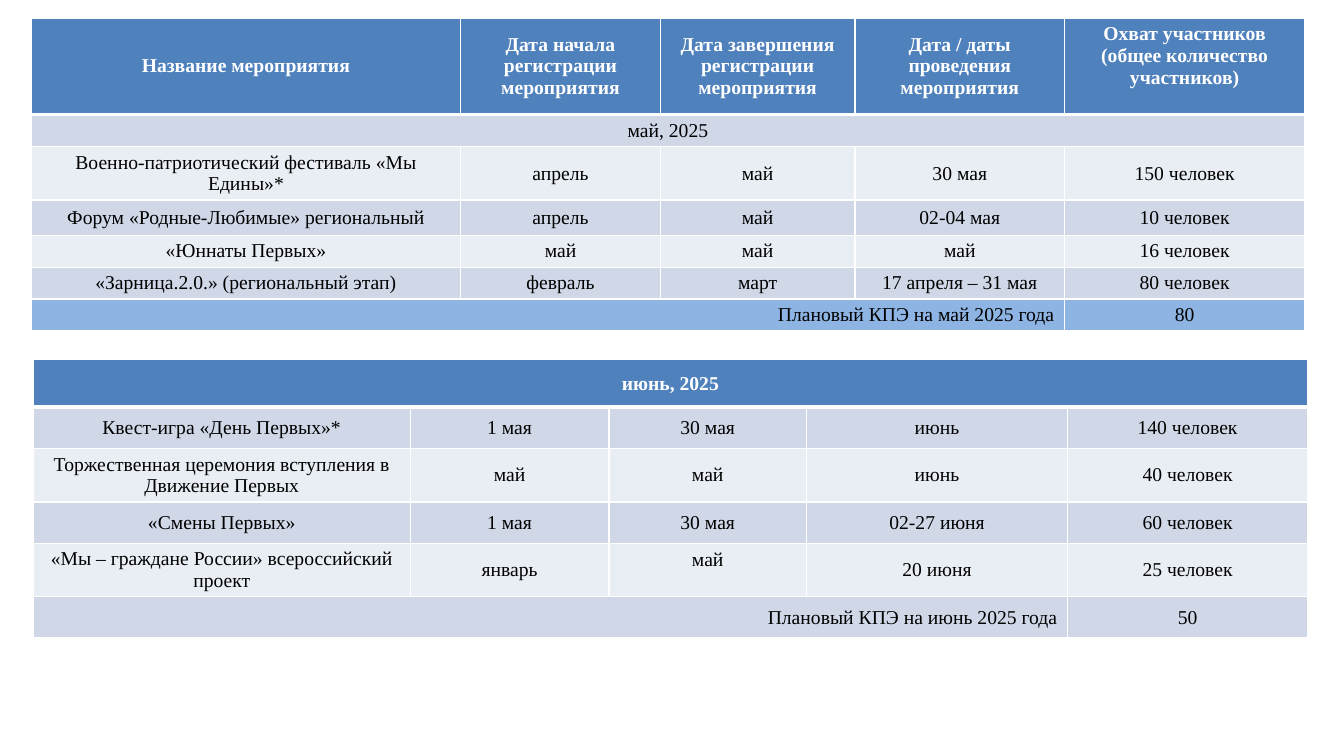
import pptx
import pptx.dml.color
import pptx.enum.text
import pptx.oxml
import pptx.oxml.ns
import pptx.util
from pptx.util import Inches

RGBColor = pptx.dml.color.RGBColor
ALIGN = pptx.enum.text.PP_ALIGN

# Content: a row of one text spans the table, a row of two is a total
MAY_ROWS = [
    ("Название мероприятия", "Дата начала регистрации мероприятия",
     "Дата завершения регистрации мероприятия", "Дата / даты проведения мероприятия",
     "Охват участников\n(общее количество участников)"),
    ("май, 2025",),
    ("Военно-патриотический фестиваль «Мы Едины»*", "апрель", "май", "30 мая", "150 человек"),
    ("Форум «Родные-Любимые» региональный", "апрель", "май", "02-04 мая", "10 человек"),
    ("«Юннаты Первых»", "май", "май", "май", "16 человек"),
    ("«Зарница.2.0.» (региональный этап)", "февраль", "март", "17 апреля – 31 мая", "80 человек"),
    ("Плановый КПЭ на май 2025 года", "80"),
]
JUNE_ROWS = [
    ("июнь, 2025",),
    ("Квест-игра «День Первых»*", "1 мая", "30 мая", "июнь", "140 человек"),
    ("Торжественная церемония вступления в Движение Первых", "май", "май", "июнь", "40 человек"),
    ("«Смены Первых»", "1 мая", "30 мая", "02-27 июня", "60 человек"),
    ("«Мы – граждане России» всероссийский проект", "январь", "май", "20 июня", "25 человек"),
    ("Плановый КПЭ на июнь 2025 года", "50"),
]

# Format
FONT = "Times New Roman"
WHITE = RGBColor(0xFF, 0xFF, 0xFF)
BLACK = RGBColor(0x00, 0x00, 0x00)
HEADER = RGBColor(0x4F, 0x81, 0xBD)
BANDS = (RGBColor(0xE9, 0xED, 0xF4), RGBColor(0xD0, 0xD8, 0xE8))
MAY_TOTAL = RGBColor(0x8E, 0xB4, 0xE3)
MARGIN = 0.05
RAISED_MARGIN = 0.26  # lifts a text by half a line

SCHEDULES = [
    dict(rows=MAY_ROWS, left=0.31, top=0.18, widths=(4.26, 1.98, 1.93, 2.08, 2.38),
         heights=(0.95, 0.32, 0.53, 0.35, 0.31, 0.31, 0.31),
         total_fill=MAY_TOTAL, raised=(0, 4)),
    dict(rows=JUNE_ROWS, left=0.33, top=3.57, widths=(3.74, 1.97, 1.96, 2.59, 2.38),
         heights=(0.47, 0.41, 0.53, 0.41, 0.53, 0.41),
         total_fill=BANDS[1], raised=(4, 2)),
]


def write(frame, text, color=BLACK, bold=False, align=ALIGN.CENTER):
    frame.text = text
    for paragraph in frame.paragraphs:
        paragraph.alignment = align
        for run in paragraph.runs:
            run.font.name, run.font.size = FONT, pptx.util.Pt(14)
            run.font.bold, run.font.color.rgb = bold, color


def style_cell(cell, fill, top_points, bottom_points):
    properties = cell._tc.get_or_add_tcPr()
    for side, points in (("L", 1), ("R", 1), ("T", top_points), ("B", bottom_points)):
        properties.append(pptx.oxml.parse_xml(
            f'<a:ln{side} {pptx.oxml.ns.nsdecls("a")} w="{points * 12700}">'
            f'<a:solidFill><a:srgbClr val="{WHITE}"/></a:solidFill></a:ln{side}>'))
    cell.fill.solid()
    cell.fill.fore_color.rgb = fill
    cell.vertical_anchor = pptx.enum.text.MSO_ANCHOR.MIDDLE
    cell.margin_left = cell.margin_right = Inches(0.1)
    cell.margin_top = cell.margin_bottom = Inches(MARGIN)


def add_schedule(slide, rows, left, top, widths, heights, total_fill, raised):
    count = len(widths)
    table = slide.shapes.add_table(
        len(rows), count, Inches(left), Inches(top),
        Inches(sum(widths)), Inches(sum(heights))).table
    for column, width in zip(table.columns, widths):
        column.width = Inches(width)

    for r, texts in enumerate(rows):
        table.rows[r].height = Inches(heights[r])
        is_header, is_total = r == 0, len(texts) == 2
        fill = HEADER if is_header else total_fill if is_total else BANDS[r % 2]
        for c in range(count):
            style_cell(table.cell(r, c), fill, 3 if r == 1 else 1, 3 if is_header else 1)

        # The first text takes the columns the others leave free
        span = count - len(texts) + 1
        if span > 1:
            table.cell(r, 0).merge(table.cell(r, span - 1))
        for i, text in enumerate(texts):
            cell = table.cell(r, i + span - 1 if i else 0)
            write(cell.text_frame, text, color=WHITE if is_header else BLACK, bold=is_header,
                  align=ALIGN.RIGHT if is_total and i == 0 else ALIGN.CENTER)
    table.cell(*raised).margin_bottom = Inches(RAISED_MARGIN)


def main():
    deck = pptx.Presentation()
    deck.slide_width, deck.slide_height = Inches(13.33), Inches(7.5)
    slide = deck.slides.add_slide(deck.slide_layouts[6])
    for schedule in SCHEDULES:
        add_schedule(slide, **schedule)
    deck.save("out.pptx")


if __name__ == "__main__":
    main()
